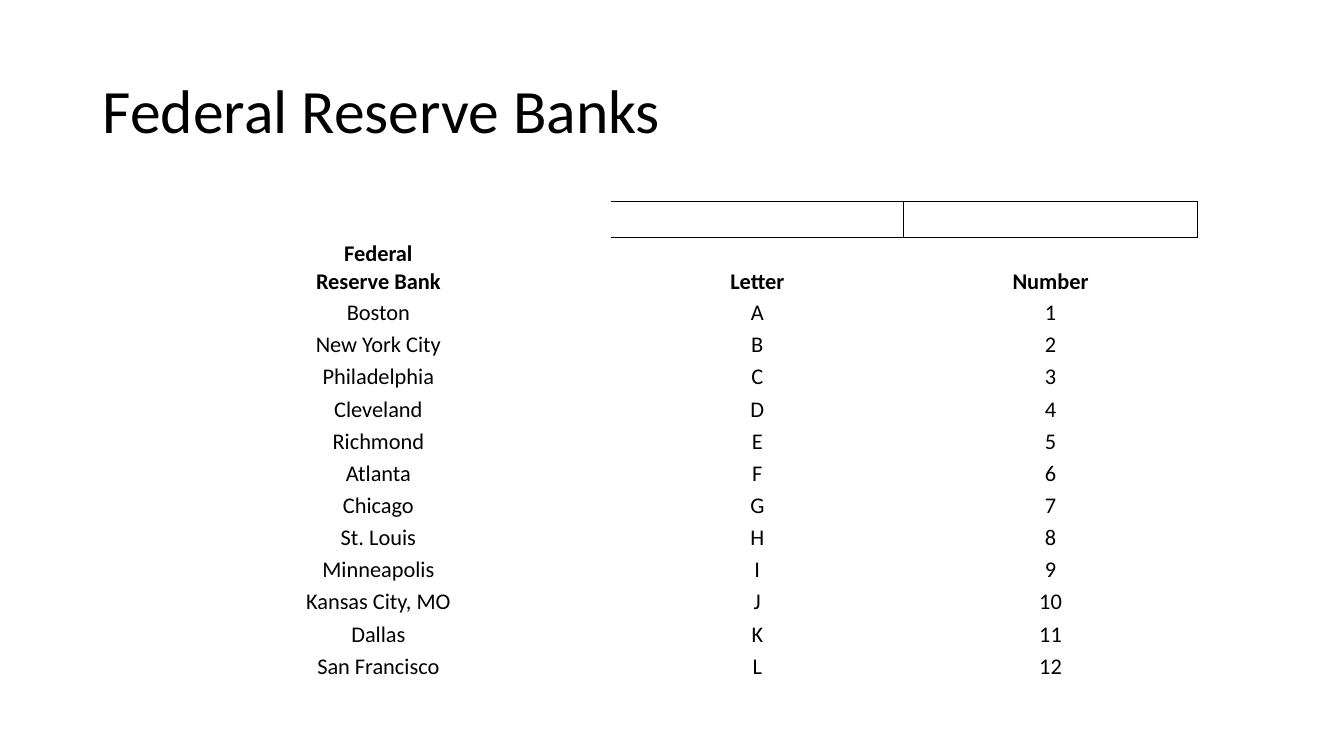
from copy import deepcopy

from lxml import etree
from pptx import Presentation
from pptx.dml.color import RGBColor
from pptx.enum.text import MSO_ANCHOR, PP_ALIGN
from pptx.oxml.ns import qn
from pptx.util import Cm, Pt

LEFT, CENTER = PP_ALIGN.LEFT, PP_ALIGN.CENTER
TOP, MIDDLE, BOTTOM = MSO_ANCHOR.TOP, MSO_ANCHOR.MIDDLE, MSO_ANCHOR.BOTTOM
TITLE_ONLY = 5
NO_STYLE = "{2D5ABB26-0587-4C30-8999-92F81FD0307C}"
BANKS = ["Boston", "New York City", "Philadelphia", "Cleveland", "Richmond",
         "Atlanta", "Chicago", "St. Louis", "Minneapolis", "Kansas City, MO",
         "Dallas", "San Francisco"]


def rgb(color):
    return RGBColor.from_string(color)


def write(tf, text, font="Calibri", size=16, color="000000", bold=False,
          align=CENTER, spacing=None):
    p = tf.paragraphs[0]
    p.text = text
    p.alignment = align
    p.line_spacing = spacing
    for r in p.runs:
        r.font.name = font
        r.font.size = Pt(size)
        r.font.bold = bold
        r.font.color.rgb = rgb(color)
    for br in p._p.findall(qn("a:br")):
        br.append(deepcopy(p.runs[0]._r.rPr))


class Deck:
    """Holds the ink colour and the current slide, and adds its elements."""

    def __init__(self, prs, ink="000000"):
        self.ink = ink
        self.s = prs.slides.add_slide(prs.slide_layouts[TITLE_ONLY])

    def title(self, text, x, y, w, h):
        sp = self.s.shapes.title
        sp.left, sp.top, sp.width, sp.height = Cm(x), Cm(y), Cm(w), Cm(h)
        sp.text_frame.vertical_anchor = MIDDLE
        write(sp.text_frame, text, size=44, color=self.ink, align=LEFT,
              spacing=0.9)

    def border(self, cell, sides, width=0.75):
        tcPr = cell._tc.get_or_add_tcPr()
        for side in sides:
            ln = etree.SubElement(tcPr, qn("a:ln" + side), w=str(Pt(width)))
            fill = etree.SubElement(ln, qn("a:solidFill"))
            etree.SubElement(fill, qn("a:srgbClr"), val=self.ink)

    def table(self, rows, x, y, widths, heights):
        frame = self.s.shapes.add_table(len(rows), len(widths), Cm(x), Cm(y),
                                        Cm(sum(widths)), Cm(sum(heights)))
        table = frame.table
        table.first_row = table.horz_banding = False
        table._tbl.tblPr.find(qn("a:tableStyleId")).text = NO_STYLE
        for column, width in zip(table.columns, widths):
            column.width = Cm(width)
        for i, (values, height) in enumerate(zip(rows, heights)):
            table.rows[i].height = Cm(height)
            for j, value in enumerate(values):
                cell = table.cell(i, j)
                cell.margin_left = cell.margin_right = Cm(0.05)
                cell.margin_top = cell.margin_bottom = Cm(0.05)
                cell.vertical_anchor = BOTTOM if i == 1 else TOP
                if value:
                    write(cell.text_frame, value, color=self.ink, bold=i == 1)
                if i == 0 and j > 0:
                    self.border(cell, "RTB")
                cell.fill.background()


def main():
    prs = Presentation()
    prs.slide_width, prs.slide_height = Cm(33.87), Cm(19.05)
    deck = Deck(prs)
    deck.title("Federal Reserve Banks", 2.34, 1.01, 29.21, 3.68)
    rows = [("", "", ""), ("Federal\vReserve Bank", "Letter", "Number")]
    rows += [(bank, chr(ord("A") + i), str(i + 1))
             for i, bank in enumerate(BANKS)]
    deck.table(rows, 3.68, 5.08, [11.71, 7.39, 7.39],
               [0.91, 1.5] + [0.81] * len(BANKS))
    prs.save("out.pptx")


if __name__ == "__main__":
    main()
